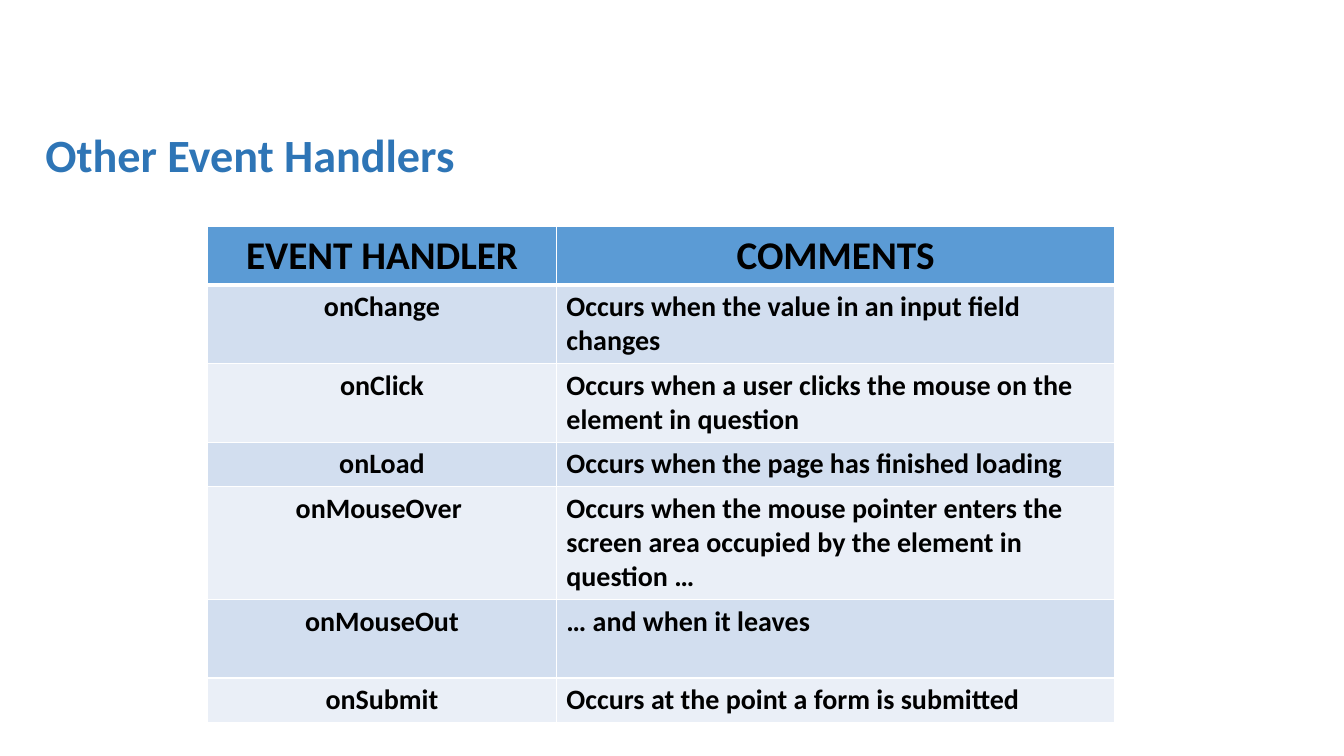
from lxml import etree
from pptx import Presentation
from pptx.dml.color import RGBColor
from pptx.enum.text import MSO_ANCHOR, PP_ALIGN
from pptx.oxml.ns import qn
from pptx.util import Pt

LEFT, CENTER = PP_ALIGN.LEFT, PP_ALIGN.CENTER
TOP, MIDDLE = MSO_ANCHOR.TOP, MSO_ANCHOR.MIDDLE

TITLE_BLUE = RGBColor(0x2E, 0x75, 0xB6)
HEADER_BLUE = RGBColor(0x5B, 0x9B, 0xD5)
BANDS = (RGBColor(0xD2, 0xDE, 0xEF), RGBColor(0xEA, 0xEF, 0xF7))
BLACK = RGBColor(0x00, 0x00, 0x00)
WHITE = RGBColor(0xFF, 0xFF, 0xFF)

COLUMN_WIDTHS = (249.1, 398.9)
HEADER_HEIGHT = 41.4
# Row height in points for the number of text lines a row holds
ROW_HEIGHTS = {1: 31.6, 2: 56, 3: 80.6}

HANDLERS = (
    ("onChange", "Occurs when the value in an input field changes", 2),
    ("onClick", "Occurs when a user clicks the mouse on the element in question", 2),
    ("onLoad", "Occurs when the page has finished loading", 1),
    ("onMouseOver ", "Occurs when the mouse pointer enters the screen area "
     "occupied by the element in question …", 3),
    ("onMouseOut", "… and when it leaves", 2),
    ("onSubmit", "Occurs at the point a form is submitted", 1),
)


class SlideBuilder:
    """Holds the shared style and the current page."""

    font_name = "Calibri"

    def __init__(self, page):
        self.page = page

    def text(self, frame, words, size, color, align):
        para = frame.paragraphs[0]
        para.alignment = align
        span = para.add_run()
        span.text = words
        style = {"name": self.font_name, "size": Pt(size), "bold": True}
        for name, value in style.items():
            setattr(span.font, name, value)
        span.font.color.rgb = color
        return para

    def title(self, words, left, top, width, height):
        box = self.page.shapes.title
        place = {"left": left, "top": top, "width": width, "height": height}
        for name, value in place.items():
            setattr(box, name, Pt(value))
        box.text_frame.vertical_anchor = MIDDLE
        para = self.text(box.text_frame, words, 33, TITLE_BLUE, LEFT)
        para.line_spacing = 0.9

    def border(self, cell, side, width):
        properties = cell._tc.get_or_add_tcPr()
        line = etree.SubElement(properties, qn(f"a:ln{side}"), w=str(Pt(width)))
        fill = etree.SubElement(line, qn("a:solidFill"))
        etree.SubElement(fill, qn("a:srgbClr"), val=str(WHITE))

    def cell(self, cell, words, size, align, fill, top_line=1, bottom_line=1):
        lines = {"L": 1, "R": 1, "T": top_line, "B": bottom_line}
        for side, width in lines.items():
            self.border(cell, side, width)
        cell.fill.solid()
        cell.fill.fore_color.rgb = fill
        cell.vertical_anchor = TOP
        self.text(cell.text_frame, words, size, BLACK, align)

    def table(self, headings, rows, left, top):
        heights = [HEADER_HEIGHT] + [ROW_HEIGHTS[lines] for *_, lines in rows]
        table = self.page.shapes.add_table(
            len(heights), len(headings), Pt(left), Pt(top),
            Pt(sum(COLUMN_WIDTHS)), Pt(sum(heights))).table
        for column, width in zip(table.columns, COLUMN_WIDTHS):
            column.width = Pt(width)
        for row, height in zip(table.rows, heights):
            row.height = Pt(height)

        # Header row with a thick line below
        for index, heading in enumerate(headings):
            self.cell(table.cell(0, index), heading, 28, CENTER, HEADER_BLUE,
                      bottom_line=3)

        # Banded body rows
        for number, (handler, comment, _) in enumerate(rows, start=1):
            fill = BANDS[(number - 1) % 2]
            top_line = 3 if number == 1 else 1
            self.cell(table.cell(number, 0), handler, 20, CENTER, fill, top_line)
            self.cell(table.cell(number, 1), comment, 20, LEFT, fill, top_line)


def main():
    deck = Presentation()
    deck.slide_width, deck.slide_height = Pt(960), Pt(540)
    builder = SlideBuilder(deck.slides.add_slide(deck.slide_layouts[5]))

    # Title
    builder.title("Other Event Handlers", 25.2, 77, 913, 71.3)

    # Event handler table
    builder.table(("EVENT HANDLER", "COMMENTS"), HANDLERS, 148.3, 162)

    deck.save("out.pptx")


if __name__ == "__main__":
    main()
